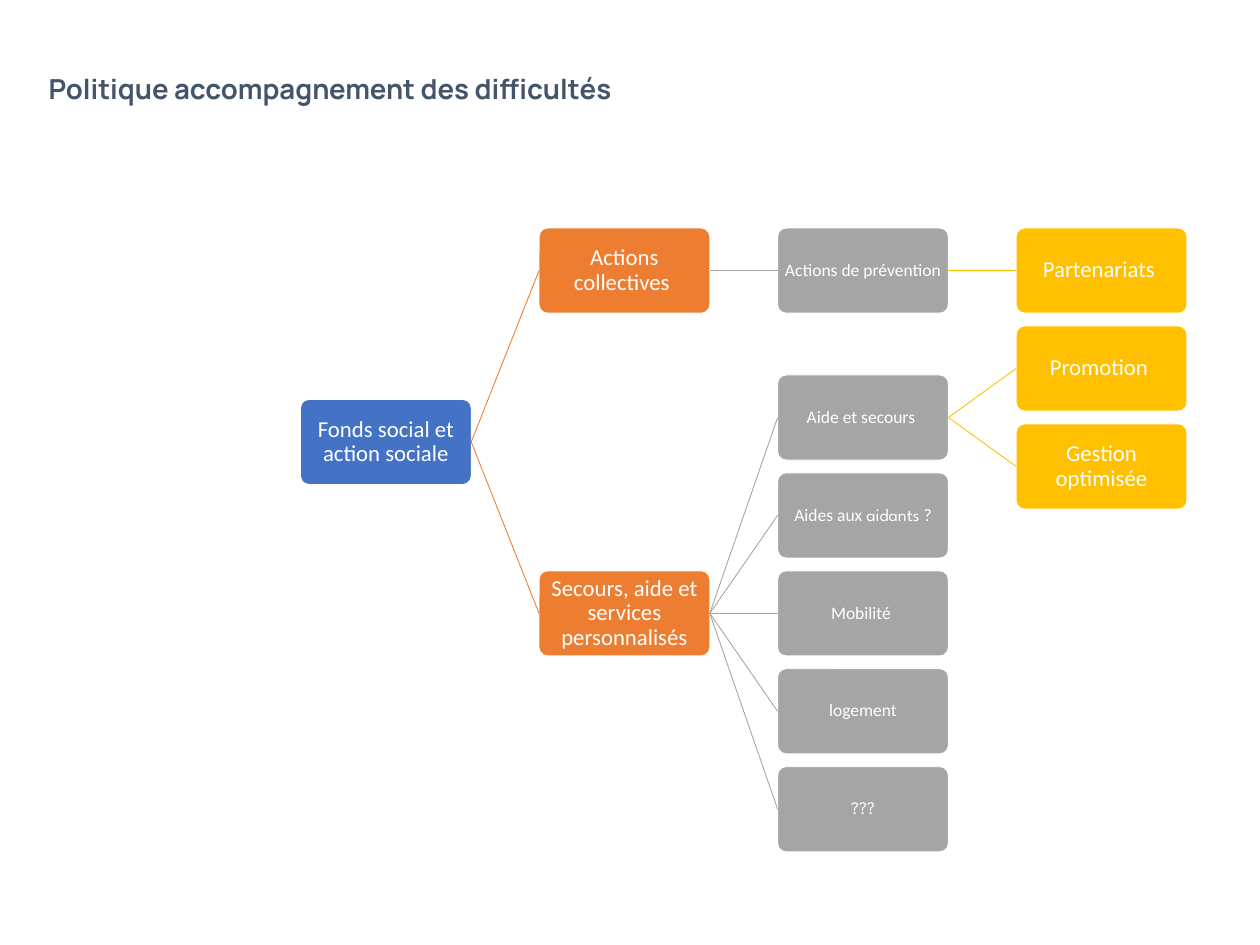
from pptx import Presentation, util as u
from pptx.dml.color import RGBColor
from pptx.enum import shapes, text
from pptx.oxml.ns import qn

PX = 4572  # EMU per px, 200 px to the inch
HUES = {"root": "4472C4", "axis": "ED7D31", "aid": "A5A5A5",
        "means": "FFC000", "title": "44546A", "white": "FFFFFF"}
LEVELS = ["root", "axis", "aid", "means"]
SIZES = {"root": 26, "axis": 26, "aid": 20, "means": 26}
INSETS = {"root": 4, "axis": 4, "aid": 2, "means": 4}
BODY, ALT = "Calibri", "League Spartan"

# Each node: its runs as (words, font), then its children
def node(words, *kids, font=BODY):
    runs = words if isinstance(words, list) else [(words, font)]
    return runs, kids


TREE = node(
    "Fonds social et action sociale",
    node("Actions collectives ",
         node("Actions de prévention", node("Partenariats "))),
    node("Secours, aide et services personnalisés",
         node("Aide et secours ", node("Promotion "), node("Gestion optimisée")),
         node([("Aides aux ", BODY), ("aidants", ALT), (" ?", BODY)]),
         node("Mobilité "),
         node("logement"),
         node("???", font=ALT)))


def px(n):
    return u.Emu(round(n * PX))


def hue(name):
    return RGBColor.from_string(HUES[name])


def write(shape, runs, size, color, bold=False, align="CENTER",
          anchor="MIDDLE", inset=None, wrap=True):
    frame = shape.text_frame
    frame.word_wrap = wrap
    frame.auto_size = text.MSO_AUTO_SIZE.NONE
    frame.vertical_anchor = text.MSO_ANCHOR[anchor]
    if inset is not None:
        frame.margin_left = frame.margin_right = px(inset)
        frame.margin_top = frame.margin_bottom = px(inset)
    para = frame.paragraphs[0]
    para.alignment = text.PP_ALIGN[align]
    para.line_spacing = 0.9
    for words, face in runs:
        run = para.add_run()
        run.text = words
        font = run.font
        font.name, font.size, font.bold = face, u.Pt(size), bold
        font.color.rgb = hue(color)


def add_head(slide, x, y, w, h):
    head = slide.shapes.title
    head.left, head.top, head.width, head.height = map(px, (x, y, w, h))
    write(head, [("Politique accompagnement des difficultés", "Manrope")],
          31.5, "title", bold=True, align="LEFT", anchor="TOP", wrap=False)


def add_box(slide, runs, level, x, y, w, h):
    box = slide.shapes.add_shape(shapes.MSO_SHAPE.ROUNDED_RECTANGLE,
                                 *map(px, (x, y, w, h)))
    box.adjustments[0] = 0.1
    box.shadow.inherit = False
    box.fill.solid()
    box.fill.fore_color.rgb = hue(level)
    box.line.color.rgb = hue("white")
    box.line.width = u.Pt(1)
    write(box, runs, SIZES[level], "white", inset=INSETS[level])
    return box


def link(slide, start, end, color):
    line = slide.shapes.add_connector(shapes.MSO_CONNECTOR.STRAIGHT, 0, 0, 0, 0)
    line.begin_connect(start, 3)
    line.end_connect(end, 1)
    line.line.color.rgb = hue(color)
    line.line.width = u.Pt(1)
    props = line._element.spPr
    props.append(props.makeelement(qn("a:effectLst"), {}))


def add_tree(slide, x, y, w, h):
    wide, high = 542, 270
    step = (w - wide) / (len(LEVELS) - 1)
    rows = [0, 1, 2, 2.5, 3.5, 4.5, 5.5]  # leaf rows, top to bottom
    pitch = (h - high) / rows[-1]
    free = iter(rows)

    # A leaf takes the next row; a parent sits midway between its end children
    def grow(item, depth=0):
        runs, kids = item
        level = LEVELS[depth]
        grown = [grow(kid, depth + 1) for kid in kids]
        row = (grown[0][1] + grown[-1][1]) / 2 if grown else next(free)
        box = add_box(slide, runs, level, x + depth * step, y + row * pitch,
                      wide, high)
        for kid, _ in grown:
            link(slide, box, kid, LEVELS[depth + 1])
        return box, row

    grow(TREE)


def main():
    deck = Presentation()
    deck.slide_width, deck.slide_height = px(4000), px(3000)
    slide = deck.slides.add_slide(deck.slide_layouts[5])
    add_head(slide, 134, 230, 2016, 140)
    add_tree(slide, 954, 724, 2814, 1980)
    deck.save("out.pptx")


if __name__ == "__main__":
    main()
